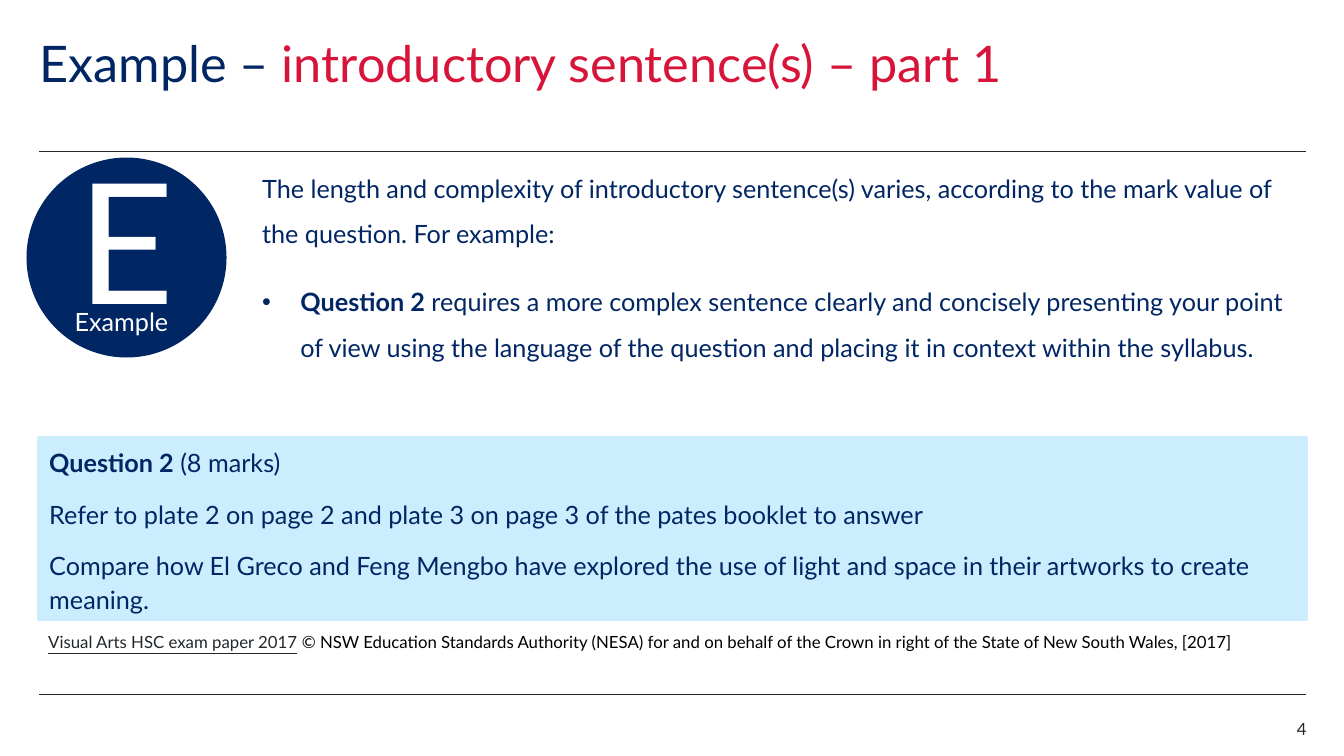
from lxml import etree
from pptx import Presentation
from pptx.dml.color import RGBColor
from pptx.enum.shapes import MSO_CONNECTOR, MSO_SHAPE
from pptx.enum.text import MSO_ANCHOR, MSO_AUTO_SIZE, PP_ALIGN
from pptx.oxml.ns import qn
from pptx.util import Inches, Pt

STRAIGHT = MSO_CONNECTOR.STRAIGHT
OVAL, RECTANGLE = MSO_SHAPE.OVAL, MSO_SHAPE.RECTANGLE
TOP, MIDDLE = MSO_ANCHOR.TOP, MSO_ANCHOR.MIDDLE
NO_AUTOFIT = MSO_AUTO_SIZE.NONE
LEFT, CENTER, RIGHT = PP_ALIGN.LEFT, PP_ALIGN.CENTER, PP_ALIGN.RIGHT

FONT = "Lato"
NAVY, RED, INK, WHITE, BLACK = "002664", "D7153A", "22272B", "FFFFFF", "000000"
PALE_BLUE = "CBEDFD"
MARGIN, CONTENT_WIDTH = 0.39, 12.56


def color(hex_string):
    return RGBColor.from_string(hex_string)


def place(shape, left, top, width, height):
    shape.left, shape.top = Inches(left), Inches(top)
    shape.width, shape.height = Inches(width), Inches(height)


def setup_frame(shape, inset_x=0, inset_y=0, anchor=TOP):
    frame = shape.text_frame
    frame.word_wrap = True
    frame.auto_size = NO_AUTOFIT
    frame.vertical_anchor = anchor
    frame.margin_left = frame.margin_right = Inches(inset_x)
    frame.margin_top = frame.margin_bottom = Inches(inset_y)
    return frame


def write(paragraph, parts, size, align=LEFT, spacing=None, before=0, after=0):
    paragraph.alignment = align
    paragraph.line_spacing = spacing
    paragraph.space_before, paragraph.space_after = Pt(before), Pt(after)
    for text, hex_string, bold, underline in parts:
        run = paragraph.add_run()
        run.text = text
        font = run.font
        font.name, font.size = FONT, Pt(size)
        font.bold, font.underline = bold, underline
        font.color.rgb = color(hex_string)


def plain(text, hex_string=NAVY):
    return text, hex_string, False, False


def strong(text):
    return text, NAVY, True, False


def set_bullet(paragraph, indent, character=None):
    properties = paragraph._p.get_or_add_pPr()
    properties.set("marL", str(Inches(indent)))
    properties.set("indent", str(-Inches(indent)))
    if character:
        etree.SubElement(properties, qn("a:buFont")).set("typeface", "Arial")
        etree.SubElement(properties, qn("a:buChar")).set("char", character)
    else:
        etree.SubElement(properties, qn("a:buNone"))


def style_shape(shape, fill, line_width):
    shape.shadow.inherit = False
    shape.fill.solid()
    shape.fill.fore_color.rgb = color(fill)
    shape.line.color.rgb = color(fill)
    shape.line.width = Pt(line_width)


def add_rule(slide, left, top, width):
    rule = slide.shapes.add_connector(
        STRAIGHT, Inches(left), Inches(top), Inches(left + width), Inches(top))
    rule.line.color.rgb = color(INK)
    rule.line.width = Pt(0.5)
    etree.SubElement(rule._element.spPr, qn("a:effectLst"))


def add_title(slide, left, top, width, height):
    title = slide.shapes.title
    place(title, left, top, width, height)
    parts = [plain("Example – "), plain("introductory sentence(s) – part 1", RED)]
    write(setup_frame(title).paragraphs[0], parts, 36, spacing=0.9)


def add_badge(slide, left, top, diameter):
    badge = slide.shapes.add_group_shape()
    circle = badge.shapes.add_shape(
        OVAL, Inches(left), Inches(top), Inches(diameter), Inches(diameter))
    style_shape(circle, NAVY, 1)
    frame = setup_frame(circle, 0.1, 0.05, MIDDLE)
    frame.margin_bottom = Inches(0.45)
    write(frame.paragraphs[0], [plain("E", WHITE)], 120, CENTER)
    caption = badge.shapes.add_textbox(
        Inches(left + 0.47), Inches(top + 1.47), Inches(1.03), Inches(0.48))
    write(setup_frame(caption).paragraphs[0], [plain("Example", WHITE)], 18)


def add_explanation(slide, left, top, width, height):
    body = slide.placeholders[1]
    place(body, left, top, width, height)
    frame = setup_frame(body)
    introduction = frame.paragraphs[0]
    set_bullet(introduction, 0)
    write(introduction, [plain(
        "The length and complexity of introductory sentence(s) varies, according to "
        "the mark value of the question. For example:")], 18, spacing=1.5, after=12)
    requirement = frame.add_paragraph()
    set_bullet(requirement, 0.38, "•")
    write(requirement, [strong("Question 2"), plain(
        " requires a more complex sentence clearly and concisely presenting your "
        "point of view using the language of the question and placing it in context "
        "within the syllabus.")], 18, spacing=1.5, before=4, after=12)


def add_question(slide, left, top, width, height):
    panel = slide.shapes.add_shape(
        RECTANGLE, Inches(left), Inches(top), Inches(width), Inches(height))
    style_shape(panel, PALE_BLUE, 3)
    frame = setup_frame(panel, 0.1, 0.05)
    lines = [
        [strong("Question 2"), plain(" (8 marks)")],
        [plain("Refer to plate 2 on page 2 and plate 3 on page 3 of the pates "
               "booklet to answer")],
        [plain("Compare how El Greco and Feng Mengbo have explored the use of light "
               "and space in their artworks to create meaning.")],
    ]
    for index, parts in enumerate(lines):
        paragraph = frame.add_paragraph() if index else frame.paragraphs[0]
        write(paragraph, parts, 18, spacing=1.14, before=12 if index else 0)


def add_citation(slide, left, top, width, height):
    citation = slide.shapes.add_textbox(
        Inches(left), Inches(top), Inches(width), Inches(height))
    write(setup_frame(citation, 0.1, 0.05).paragraphs[0], [
        ("Visual Arts HSC exam paper 2017", INK, False, True),
        plain(" © NSW Education Standards Authority (NESA) for and on behalf of the "
              "Crown in right of the State of New South Wales, [2017]", BLACK)], 12)


def add_page_number(slide, left, top, width, height):
    number = slide.shapes.add_textbox(
        Inches(left), Inches(top), Inches(width), Inches(height))
    write(setup_frame(number).paragraphs[0], [plain("4", INK)], 12, RIGHT)


def main():
    presentation = Presentation()
    presentation.slide_width, presentation.slide_height = Inches(13.33), Inches(7.5)
    slide = presentation.slides.add_slide(presentation.slide_layouts[1])
    for top in (1.5, 6.89):
        add_rule(slide, MARGIN, top, CONTENT_WIDTH)
    add_title(slide, MARGIN, 0.39, 11.02, 1.1)
    add_badge(slide, 0.27, 1.57, 1.97)
    add_explanation(slide, 2.6, 1.57, 10.35, 2.18)
    add_question(slide, MARGIN, 4.35, CONTENT_WIDTH, 1.79)
    add_citation(slide, 0.38, 6.22, CONTENT_WIDTH, 0.3)
    add_page_number(slide, 12.17, 7.13, 0.79, 0.2)
    presentation.save("out.pptx")


if __name__ == "__main__":
    main()
